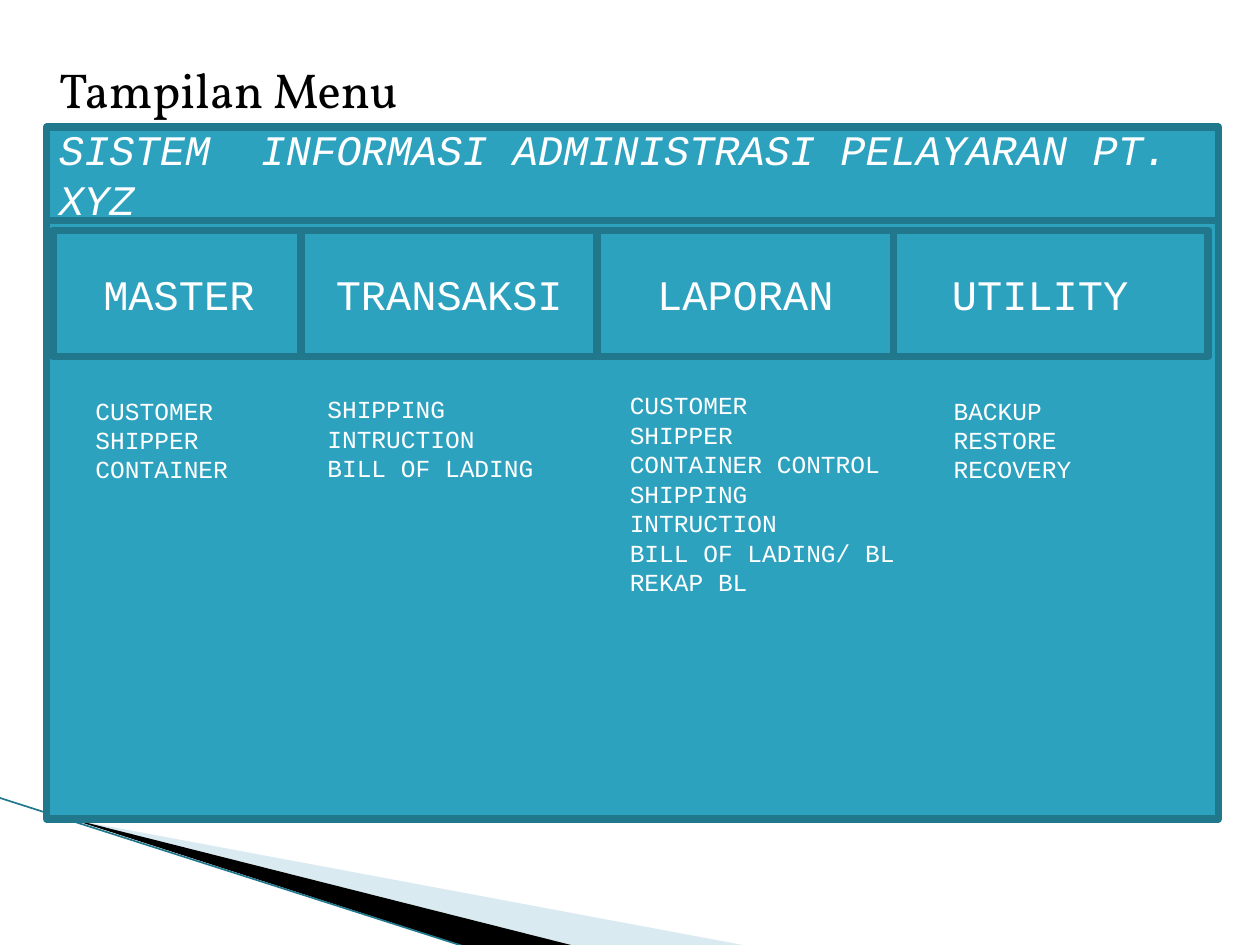
from lxml import etree
from pptx import Presentation
from pptx.dml.color import RGBColor
from pptx.enum.shapes import MSO_CONNECTOR, MSO_SHAPE
from pptx.enum.text import MSO_ANCHOR, PP_ALIGN
from pptx.oxml.ns import qn
from pptx.util import Inches, Pt

STRAIGHT = MSO_CONNECTOR.STRAIGHT
RECTANGLE = MSO_SHAPE.RECTANGLE
TOP, MIDDLE = MSO_ANCHOR.TOP, MSO_ANCHOR.MIDDLE
LEFT, CENTER = PP_ALIGN.LEFT, PP_ALIGN.CENTER

WHITE = RGBColor(0xFF, 0xFF, 0xFF)
BLACK = RGBColor(0, 0, 0)
TEAL = RGBColor(0x2D, 0xA2, 0xBF)
DARK_TEAL = RGBColor(0x21, 0x78, 0x8D)
PALE_BLUE = RGBColor(0xA0, 0xCB, 0xDC)

HEADING = {"name": "Vollkorn", "size": Pt(28), "color": BLACK}
BANNER = {"name": "Courier New", "size": Pt(24), "color": WHITE, "italic": True}
TAB = {"name": "Courier New", "size": Pt(24), "color": WHITE}
ITEM = {"name": "Courier New", "size": Pt(14), "color": WHITE}

TABS = [
    ("MASTER", 0.05, 2),
    ("TRANSAKSI", 2.02, 2.35),
    ("UTILITY", 6.55, 2.67),
    ("LAPORAN", 4.37, 2.35),
]
MENUS = [
    (0.29, 2.08, 1.33, ["CUSTOMER", "SHIPPER", "CONTAINER"]),
    (4.53, 2.04, 2.33, ["CUSTOMER", "SHIPPER", "CONTAINER CONTROL",
                        "SHIPPING INTRUCTION", "BILL OF LADING/ BL", "REKAP BL"]),
    (7.1, 2.08, 1.2, ["BACKUP", "RESTORE", "RECOVERY"]),
    (2.13, 2.07, 2.33, ["SHIPPING INTRUCTION", "BILL OF LADING"]),
]


def style_font(font, style):
    for attribute, value in style.items():
        if attribute == "color":
            font.color.rgb = value
        else:
            setattr(font, attribute, value)


def write_lines(shape, lines, style, align=LEFT, anchor=TOP):
    frame = shape.text_frame
    frame.word_wrap = True
    frame.vertical_anchor = anchor
    frame.text = "\n".join(lines)
    for paragraph in frame.paragraphs:
        paragraph.alignment = align
        style_font(paragraph.font, style)


def add_panel(slide, left, top, width, height):
    panel = slide.shapes.add_shape(
        RECTANGLE, Inches(left), Inches(top), Inches(width), Inches(height))
    panel.shadow.inherit = False
    panel.fill.solid()
    panel.fill.fore_color.rgb = TEAL
    panel.line.color.rgb = DARK_TEAL
    panel.line.width = Pt(4.33)
    return panel


def add_text(slide, left, top, width, height):
    return slide.shapes.add_textbox(
        Inches(left), Inches(top), Inches(width), Inches(height))


def add_wedge(slide, points, color):
    scaled = [(Inches(x), Inches(y)) for x, y in points]
    builder = slide.shapes.build_freeform(*scaled[0])
    builder.add_line_segments(scaled[1:], close=True)
    wedge = builder.convert_to_shape()
    wedge.shadow.inherit = False
    wedge.fill.solid()
    wedge.fill.fore_color.rgb = color
    wedge.line.fill.background()
    return wedge


def add_swoosh(slide, left, top):
    pale = add_wedge(slide, [(left + 0.02, top + 0.01), (left + 5.42, top + 1.02),
                             (left + 4.03, top + 1.02)], PALE_BLUE)
    tint = pale.fill._xPr.find(qn("a:solidFill"))[0]
    etree.SubElement(tint, qn("a:alpha"), val="40000")
    add_wedge(slide, [(left, top), (left + 4.04, top + 1.02),
                      (left + 3.19, top + 1.03)], BLACK)
    edge = slide.shapes.add_connector(
        STRAIGHT, Inches(left - 0.54), Inches(top - 0.16),
        Inches(left + 3.18), Inches(top + 1.03))
    edge.line.color.rgb = DARK_TEAL
    edge.line.width = Pt(0.95)
    etree.SubElement(edge._element.spPr, qn("a:effectLst"))


def add_heading(slide, left, top, width, height):
    heading = add_text(slide, left, top, width, height)
    paragraph = heading.text_frame.paragraphs[0]
    properties = paragraph._p.get_or_add_pPr()
    properties.set("marL", str(Inches(0.5)))
    properties.set("indent", str(-Inches(0.5)))
    etree.SubElement(properties, qn("a:buFont"), typeface="Arial")
    etree.SubElement(properties, qn("a:buChar"), char="•")
    write_lines(heading, ["Tampilan Menu"], HEADING)


def add_menu_screen(slide, left, top, width, banner_height, body_height):
    body_top = top + banner_height
    add_panel(slide, left, body_top, width, body_height)
    for label, offset, tab_width in TABS:
        tab = add_panel(slide, left + offset, body_top + 0.08, tab_width, 1)
        write_lines(tab, [label], TAB, CENTER, MIDDLE)
    banner = add_panel(slide, left, top, width, banner_height)
    write_lines(banner, ["SISTEM  INFORMASI ADMINISTRASI PELAYARAN PT. XYZ"],
                BANNER, LEFT, MIDDLE)
    for offset, drop, menu_width, items in MENUS:
        menu = add_text(slide, left + offset, top + drop, menu_width,
                        0.1 + 0.24 * len(items))
        write_lines(menu, items, ITEM)


def main():
    presentation = Presentation()
    presentation.slide_width = Inches(10)
    presentation.slide_height = Inches(7.5)
    slide = presentation.slides.add_slide(presentation.slide_layouts[6])
    add_swoosh(slide, 0.53, 6.49)
    add_heading(slide, 0.37, 0.42, 9.05, 1.11)
    add_menu_screen(slide, 0.37, 1.01, 9.3, 0.74, 4.75)
    presentation.save("out.pptx")


if __name__ == "__main__":
    main()
